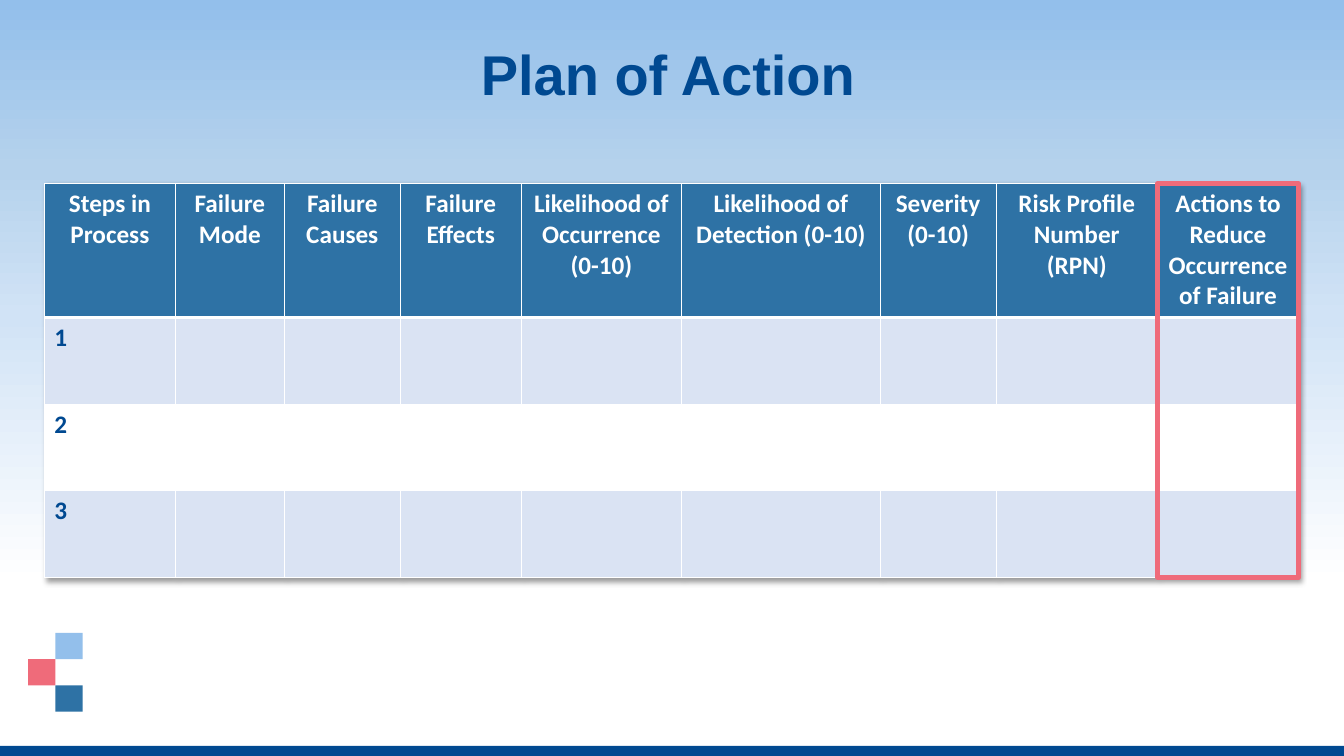
from lxml import etree
from pptx import Presentation
from pptx.dml.color import RGBColor
from pptx.enum.shapes import MSO_SHAPE
from pptx.enum.text import MSO_ANCHOR, MSO_AUTO_SIZE, PP_ALIGN
from pptx.oxml.ns import qn
from pptx.util import Inches, Pt

RECTANGLE = MSO_SHAPE.RECTANGLE
CENTER, LEFT, TOP = PP_ALIGN.CENTER, PP_ALIGN.LEFT, MSO_ANCHOR.TOP
NO_AUTOFIT = MSO_AUTO_SIZE.NONE

NAVY, BLUE, SKY, CORAL = "004991", "2E72A5", "93BFEB", "EF6B7A"
PALE, WHITE = "DAE3F3", "FFFFFF"

TITLE = "Plan of Action"
COLUMNS = [
    ("Steps in Process", 1.3),
    ("Failure Mode", 1.08),
    ("Failure Causes", 1.15),
    ("Failure Effects", 1.2),
    ("Likelihood of Occurrence (0-10)", 1.59),
    ("Likelihood of Detection (0-10)", 1.97),
    ("Severity (0-10)", 1.15),
    ("Risk Profile Number (RPN)", 1.6),
    ("Actions to Reduce Occurrence of Failure", 1.4),
]
STEPS = ["1", "2", "3"]
SKY_STOPS = [(0, SKY), (29, "B5D2EC"), (54, "D1E3F6"), (100, WHITE)]
SQUARES = [(1, 0, SKY), (0, 1, CORAL), (1, 2, BLUE)]

WIDTH, HEIGHT = 13.33, 7.5
TABLE_LEFT, TABLE_TOP = 0.44, 1.82
HEADER_HEIGHT, ROW_HEIGHT = 1.33, 0.86
SQUARE_LEFT, SQUARE_TOP, SQUARE_WIDTH, SQUARE_HEIGHT = 0.28, 6.28, 0.27, 0.26


def color(value):
    return RGBColor.from_string(value)


def add_rectangle(shapes, left, top, width, height, fill=None):
    shape = shapes.add_shape(
        RECTANGLE, Inches(left), Inches(top), Inches(width), Inches(height))
    shape.shadow.inherit = False
    shape.line.fill.background()
    if fill:
        shape.fill.solid()
        shape.fill.fore_color.rgb = color(fill)
    else:
        shape.fill.background()
    return shape


def add_color(parent, value):
    return etree.SubElement(parent, qn("a:srgbClr"), val=value)


def add_shadow(effects):
    shadow = etree.SubElement(
        effects, qn("a:outerShdw"), blurRad=str(Pt(4)), dist=str(Pt(3)),
        dir="2700000", algn="tl", rotWithShape="0")
    etree.SubElement(add_color(shadow, "000000"), qn("a:alpha"), val="40000")


def set_gradient(shape, stops):
    shape.fill.gradient()
    shape.fill.gradient_angle = 270
    stop_list = shape.element.spPr.find(qn("a:gradFill")).find(qn("a:gsLst"))
    for stop in list(stop_list):
        stop_list.remove(stop)
    for position, value in stops:
        stop = etree.SubElement(stop_list, qn("a:gs"), pos=str(position * 1000))
        add_color(stop, value)


def add_text(paragraph, text, size, font, value, alignment):
    paragraph.alignment = alignment
    run = paragraph.add_run()
    run.text = text
    run.font.size = Pt(size)
    run.font.name = font
    run.font.bold = True
    run.font.color.rgb = color(value)


def set_borders(cell, top, bottom):
    properties = cell._tc.get_or_add_tcPr()
    sides = [("a:lnL", 1), ("a:lnR", 1), ("a:lnT", top), ("a:lnB", bottom)]
    for index, (side, points) in enumerate(sides):
        line = etree.Element(qn(side), w=str(Pt(points)))
        add_color(etree.SubElement(line, qn("a:solidFill")), WHITE)
        properties.insert(index, line)


def add_background(slide):
    sky = add_rectangle(slide.shapes, 0, 0, WIDTH, 5.79, WHITE)
    set_gradient(sky, SKY_STOPS)
    add_rectangle(slide.shapes, 0, 7.4, WIDTH, HEIGHT - 7.4, NAVY)
    group = slide.shapes.add_group_shape()
    for column, row, fill in SQUARES:
        add_rectangle(
            group.shapes, SQUARE_LEFT + column * SQUARE_WIDTH,
            SQUARE_TOP + row * SQUARE_HEIGHT, SQUARE_WIDTH, SQUARE_HEIGHT, fill)


def add_title(slide):
    title = slide.shapes.title
    title.left, title.top = Inches(0.55), Inches(0.42)
    title.width, title.height = Inches(12.15), Inches(0.83)
    frame = title.text_frame
    frame.auto_size = NO_AUTOFIT
    frame.vertical_anchor = TOP
    frame.paragraphs[0].line_spacing = 0.9
    add_text(frame.paragraphs[0], TITLE, 40, "Arial", NAVY, CENTER)
    title.element.getparent().append(title.element)


def add_plan(slide):
    widths = [width for _, width in COLUMNS]
    heights = [HEADER_HEIGHT] + [ROW_HEIGHT] * len(STEPS)
    table = slide.shapes.add_table(
        len(heights), len(widths), Inches(TABLE_LEFT), Inches(TABLE_TOP),
        Inches(sum(widths)), Inches(sum(heights))).table
    effects = etree.Element(qn("a:effectLst"))
    add_shadow(effects)
    table._tbl.tblPr.insert(0, effects)
    for column, width in zip(table.columns, widths):
        column.width = Inches(width)
    for row, height in zip(table.rows, heights):
        row.height = Inches(height)

    rows = [[heading for heading, _ in COLUMNS]]
    rows += [[step] + [""] * (len(COLUMNS) - 1) for step in STEPS]
    for row_index, texts in enumerate(rows):
        header = row_index == 0
        fill = BLUE if header else PALE if row_index % 2 else WHITE
        for column_index, text in enumerate(texts):
            cell = table.cell(row_index, column_index)
            cell.fill.solid()
            cell.fill.fore_color.rgb = color(fill)
            set_borders(cell, 3 if row_index == 1 else 1, 3 if header else 1)
            if text:
                add_text(
                    cell.text_frame.paragraphs[0], text, 18, "Calibri",
                    WHITE if header else NAVY, CENTER if header else LEFT)

    outline = add_rectangle(
        slide.shapes, TABLE_LEFT + sum(widths[:-1]), TABLE_TOP,
        widths[-1], sum(heights))
    outline.line.color.rgb = color(CORAL)
    outline.line.width = Pt(3)


def main():
    presentation = Presentation()
    presentation.slide_width = Inches(WIDTH)
    presentation.slide_height = Inches(HEIGHT)
    slide = presentation.slides.add_slide(presentation.slide_layouts[5])
    add_background(slide)
    add_title(slide)
    add_plan(slide)
    presentation.save("out.pptx")


if __name__ == "__main__":
    main()
